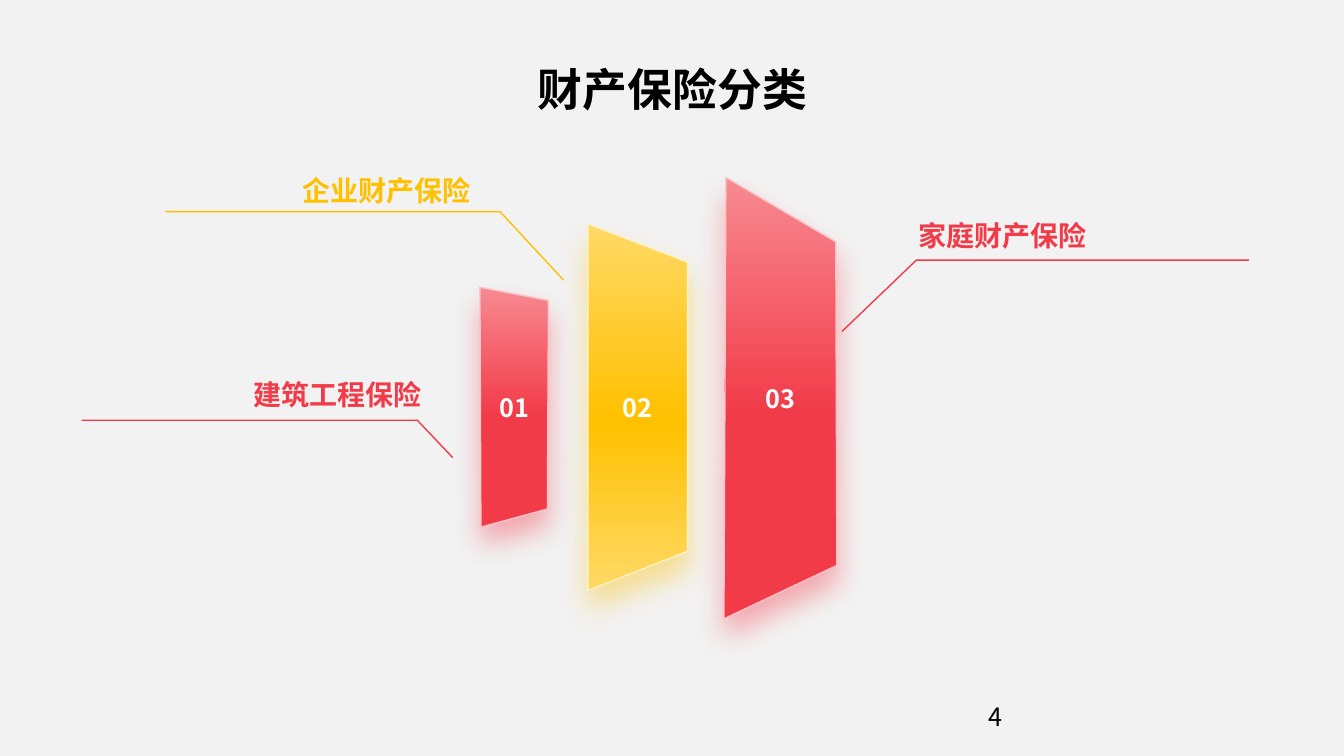
from lxml import etree
from pptx import Presentation
from pptx import util as u
from pptx.dml import color
from pptx.enum import text
from pptx.oxml import ns

RED, YELLOW, WHITE, BLACK = "F23B48", "FFC000", "FFFFFF", "000000"
RED_FADE = [(0, "F78991"), (54, RED), (100, RED)]
YELLOW_FADE = [(0, "FFD966"), (54, YELLOW), (100, "FFD966")]
CJK_FONT = "Noto Sans CJK SC"
LABEL_WIDTH, LABEL_HEIGHT = 3.16, 0.42

PANELS = [
    ("01", (4.76, 2.85), [(0, 0), (0.68, 0.13), (0.67, 2.2), (0.01, 2.38)], RED_FADE, RED, "FBC4C8"),
    ("02", (5.83, 2.22), [(0, 0), (0.99, 0.38), (0.99, 3.25), (0, 3.64)], YELLOW_FADE, YELLOW, "FFF2CC"),
    ("03", (7.18, 1.76), [(0.02, 0), (1.11, 0.64), (1.12, 3.85), (0, 4.38)], RED_FADE, RED, "FBC4C8"),
]
CALLOUTS = [
    ("建筑工程保险", (0.81, 4.17), [(0, 0), (3.33, 0), (3.68, 0.37)], (0.21, -0.09), "RIGHT", RED),
    ("企业财产保险", (1.64, 2.1), [(0, 0), (3.32, 0), (3.95, 0.68)], (-0.13, -0.05), "RIGHT", YELLOW),
    ("家庭财产保险", (8.35, 2.58), [(0, 0.71), (0.74, 0), (4.04, 0)], (0.76, -0.08), "LEFT", RED),
]


def rgb(value):
    """Turn a hex string into a colour."""
    return color.RGBColor.from_string(value)


def add_element(parent, tag, **attributes):
    """Append a DrawingML element to its parent."""
    return etree.SubElement(parent, ns.qn(tag), {key: str(value) for key, value in attributes.items()})


def write(shape, words, size, ink, align, bold=True, font=CJK_FONT):
    """Write one formatted paragraph into a shape."""
    paragraph = shape.text_frame.paragraphs[0]
    paragraph.text = words
    paragraph.alignment = align
    paragraph.font.size = u.Pt(size)
    paragraph.font.bold = bold
    paragraph.font.name = font
    paragraph.font.color.rgb = rgb(ink)
    add_element(paragraph._p.pPr.find(ns.qn("a:defRPr")), "a:ea", typeface=CJK_FONT)
    return paragraph


def set_frame(shape, anchor, margin=0.0):
    """Set wrapping, anchor and equal margins of a text frame."""
    frame = shape.text_frame
    frame.word_wrap = True
    frame.auto_size = text.MSO_AUTO_SIZE.NONE
    frame.vertical_anchor = anchor
    frame.margin_left = frame.margin_right = u.Inches(margin)
    frame.margin_top = frame.margin_bottom = u.Inches(margin / 2)


def add_outline(slide, origin, points, close):
    """Draw a freeform through points given relative to an origin."""
    left, top = origin
    corners = [(u.Inches(left + x), u.Inches(top + y)) for x, y in points]
    builder = slide.shapes.build_freeform(*corners[0])
    builder.add_line_segments(corners[1:], close=close)
    shape = builder.convert_to_shape()
    shape.shadow.inherit = False
    return shape


def add_title(slide, box, words):
    """Place the slide title in its box."""
    title = slide.shapes.title
    title.left, title.top, title.width, title.height = map(u.Inches, box)
    set_frame(title, text.MSO_ANCHOR.TOP)
    write(title, words, 32, BLACK, text.PP_ALIGN.CENTER, font="Lato").line_spacing = 0.9


def add_panel(slide, number, origin, points, stops, glow, edge):
    """Draw a numbered, shaded panel with a coloured glow beneath."""
    panel = add_outline(slide, origin, points, True)
    panel.line.color.rgb = rgb(edge)
    panel.line.width = u.Pt(1)
    properties = panel._element.spPr
    gradient = etree.Element(ns.qn("a:gradFill"), rotWithShape="1")
    stop_list = add_element(gradient, "a:gsLst")
    for position, value in stops:
        stop = add_element(stop_list, "a:gs", pos=position * 1000)
        add_element(stop, "a:srgbClr", val=value)
    add_element(gradient, "a:lin", ang=5400000, scaled=0)
    properties.find(ns.qn("a:custGeom")).addnext(gradient)
    shadow = add_element(properties.find(ns.qn("a:effectLst")), "a:outerShdw",
                         blurRad=u.Pt(20), dist=u.Pt(12), dir=5400000, algn="t", rotWithShape=0)
    add_element(add_element(shadow, "a:srgbClr", val=glow), "a:alpha", val=40000)
    set_frame(panel, text.MSO_ANCHOR.MIDDLE, 0.1)
    panel.text_frame.word_wrap = False
    write(panel, number, 18, WHITE, text.PP_ALIGN.CENTER)


def add_callout(slide, words, origin, points, label_offset, side, ink):
    """Draw a bent leader line with its label resting above it."""
    leader = add_outline(slide, origin, points, False)
    leader.fill.background()
    leader.line.color.rgb = rgb(ink)
    leader.line.width = u.Pt(1)
    left, bottom = (start + shift for start, shift in zip(origin, label_offset))
    box = (left, bottom - LABEL_HEIGHT, LABEL_WIDTH, LABEL_HEIGHT)
    label = slide.shapes.add_textbox(*map(u.Inches, box))
    set_frame(label, text.MSO_ANCHOR.BOTTOM)
    write(label, words, 20, ink, text.PP_ALIGN[side])


def add_page_number(slide, box, number):
    """Place the page number in its box."""
    page = slide.shapes.add_textbox(*map(u.Inches, box))
    set_frame(page, text.MSO_ANCHOR.TOP, 0.1)
    write(page, number, 18, BLACK, text.PP_ALIGN.LEFT, bold=False)


def main():
    """Build and save the slide."""
    presentation = Presentation()
    presentation.slide_width, presentation.slide_height = u.Inches(13.33), u.Inches(7.5)
    slide = presentation.slides.add_slide(presentation.slide_layouts[5])
    slide.background.fill.solid()
    slide.background.fill.fore_color.rgb = rgb("F2F2F2")
    add_title(slide, (0.67, 0.67, 12, 0.77), "财产保险分类")
    for panel in PANELS:
        add_panel(slide, *panel)
    for callout in CALLOUTS:
        add_callout(slide, *callout)
    add_page_number(slide, (9.71, 6.91, 2.95, 0.35), "4")
    presentation.save("out.pptx")


if __name__ == "__main__":
    main()
